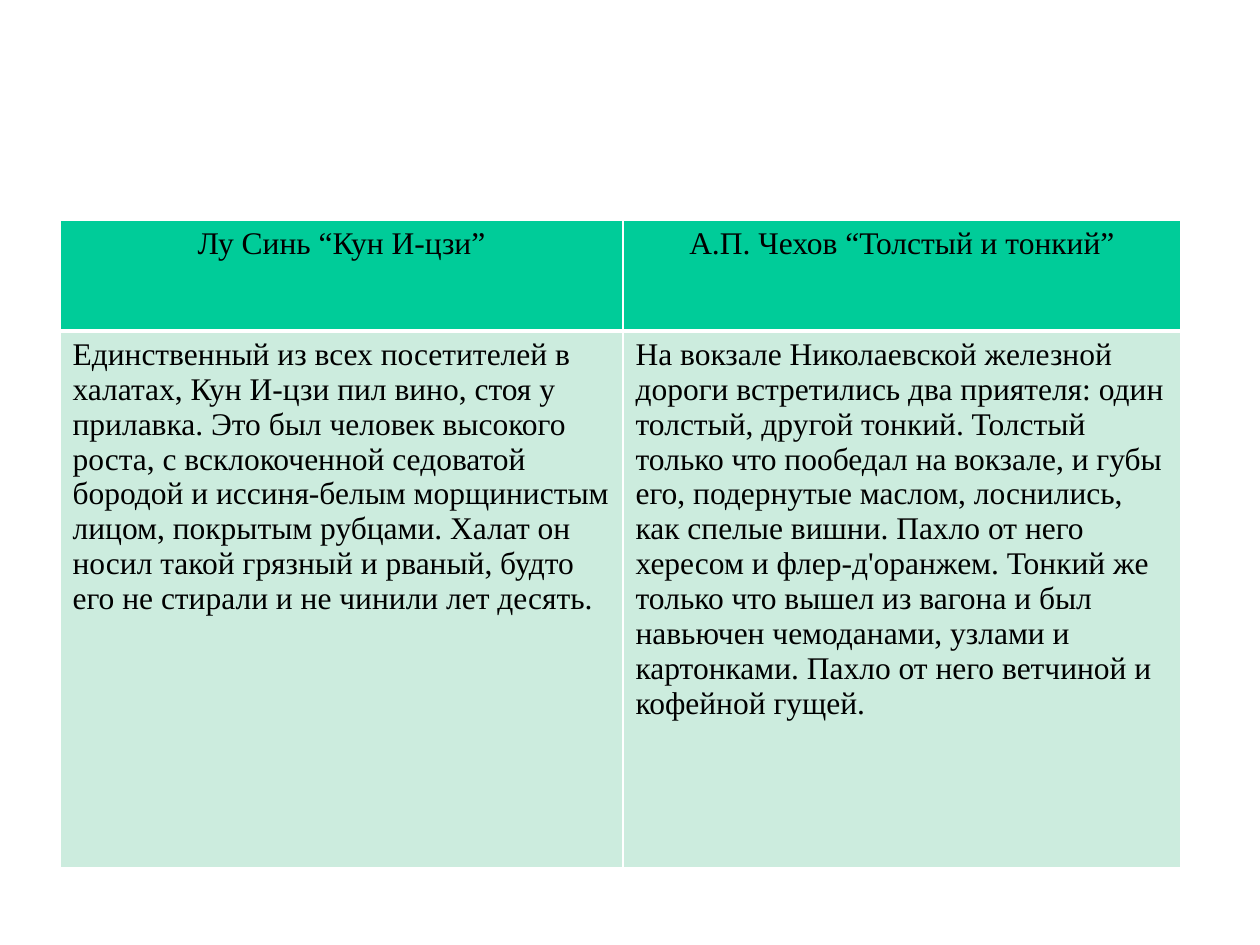
from lxml.etree import SubElement
from pptx import Presentation
from pptx.dml.color import RGBColor
from pptx.enum.text import PP_ALIGN
from pptx.oxml.ns import qn
from pptx.util import Emu, Pt

PX = 914400 // 126
HEADER_FILL, BODY_FILL = "00CC99", "CCECDE"
RULE_COLOUR = "FFFFFF"

HEADINGS = ["Лу Синь “Кун И-цзи”", "А.П. Чехов “Толстый и тонкий”"]
EXCERPTS = [
    "Единственный из всех посетителей в халатах, Кун И-цзи пил вино, стоя у "
    "прилавка. Это был человек высокого роста, с всклокоченной седоватой "
    "бородой и иссиня-белым морщинистым лицом, покрытым рубцами. Халат он "
    "носил такой грязный и рваный, будто его не стирали и не чинили лет десять.",
    "На вокзале Николаевской железной дороги встретились два приятеля: один "
    "толстый, другой тонкий. Толстый только что пообедал на вокзале, и губы "
    "его, подернутые маслом, лоснились, как спелые вишни. Пахло от него "
    "хересом и флер-д'оранжем. Тонкий же только что вышел из вагона и был "
    "навьючен чемоданами, узлами и картонками. Пахло от него ветчиной и "
    "кофейной гущей.",
]


def px(length):
    return Emu(length * PX)


def colour(hex_string):
    return RGBColor.from_string(hex_string)


def write(frame, text, size=18, font="Times New Roman", ink="000000",
          align=PP_ALIGN.LEFT):
    paragraph = frame.paragraphs[0]
    paragraph.alignment = align
    run = paragraph.add_run()
    run.text = text
    run.font.size = Pt(size)
    run.font.name = font
    run.font.color.rgb = colour(ink)


def rule_cell(cell, left=1, right=1, top=1, bottom=1):
    properties = cell._tc.get_or_add_tcPr()
    for side, width in (("L", left), ("R", right), ("T", top), ("B", bottom)):
        line = SubElement(properties, qn(f"a:ln{side}"), w=str(Pt(width)))
        fill = SubElement(line, qn("a:solidFill"))
        SubElement(fill, qn("a:srgbClr"), val=RULE_COLOUR)


def comparison_table(slide, left, top, column_widths, row_heights):
    table = slide.shapes.add_table(
        len(row_heights), len(column_widths), px(left), px(top),
        px(sum(column_widths)), px(sum(row_heights))).table
    for column, width in zip(table.columns, column_widths):
        column.width = px(width)
    for row, height in zip(table.rows, row_heights):
        row.height = px(height)

    # Header row and excerpts, parted by a thicker rule
    bands = [
        (HEADINGS, HEADER_FILL, PP_ALIGN.CENTER, {"bottom": 3}),
        (EXCERPTS, BODY_FILL, PP_ALIGN.LEFT, {"top": 3}),
    ]
    for row, (texts, fill, align, rules) in zip(table.rows, bands):
        for cell, text in zip(row.cells, texts):
            rule_cell(cell, **rules)
            cell.fill.solid()
            cell.fill.fore_color.rgb = colour(fill)
            write(cell.text_frame, text, align=align)


def main():
    deck = Presentation()
    deck.slide_width, deck.slide_height = px(1260), px(945)
    slide = deck.slides.add_slide(deck.slide_layouts[6])
    comparison_table(slide, 60, 220, column_widths=[563, 558],
                     row_heights=[111, 537])
    deck.save("out.pptx")


if __name__ == "__main__":
    main()
